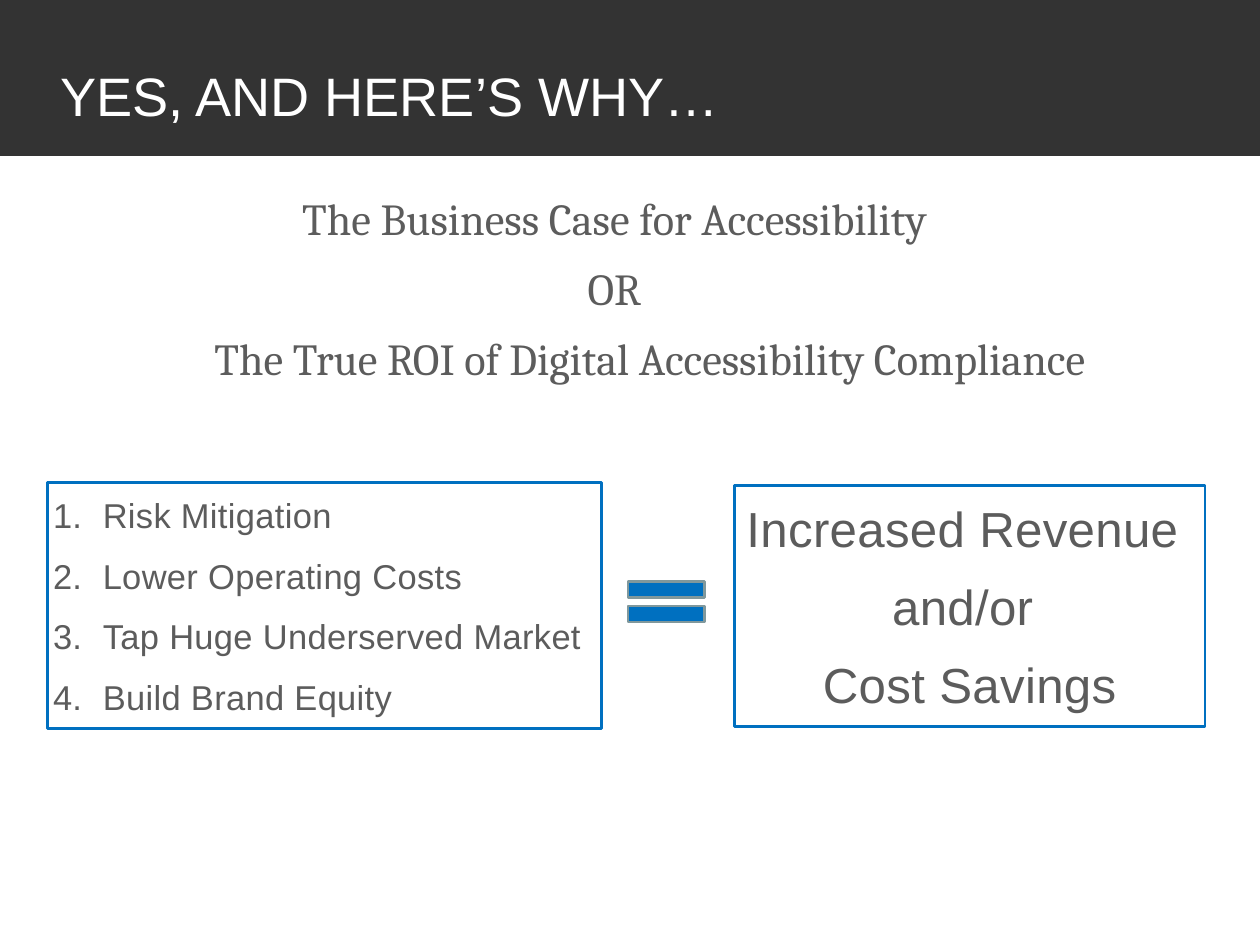
import pptx
import pptx.util
import pptx.dml.color
import pptx.enum.shapes
import pptx.enum.text
import pptx.oxml.ns
import lxml.etree
from dataclasses import dataclass

Inches = pptx.util.Inches
Pt = pptx.util.Pt
RGB = pptx.dml.color.RGBColor.from_string
MSO = pptx.enum.shapes.MSO_SHAPE
ALIGN = pptx.enum.text.PP_ALIGN
ANCHOR = pptx.enum.text.MSO_ANCHOR


@dataclass(frozen=True)
class Theme:
    band: str = "333333"
    white: str = "FFFFFF"
    text: str = "5C5C5C"
    blue: str = "0070C0"
    edge: str = "80989C"
    sans: str = "Arial"
    serif: str = "Cambria"
    title: int = 44
    heading: int = 36
    reasons: int = 28
    result: int = 40


theme = Theme()


def add_shape(kind, box, fill, line, width):
    sp = s.shapes.add_shape(kind, *[Inches(v) for v in box])
    sp.shadow.inherit = False
    if fill:
        sp.fill.solid()
        sp.fill.fore_color.rgb = RGB(fill)
    else:
        sp.fill.background()
    if line:
        sp.line.color.rgb = RGB(line)
        sp.line.width = Pt(width)
    else:
        sp.line.fill.background()
    return sp


def write(sp, lines, font, size, color, align, anchor, before, spc=0):
    tf = sp.text_frame
    tf.word_wrap = True
    tf.auto_size = pptx.enum.text.MSO_AUTO_SIZE.NONE
    tf.vertical_anchor = anchor
    tf.margin_left = tf.margin_right = tf.margin_top = tf.margin_bottom = Inches(0.06)
    for i, line in enumerate(lines):
        p = tf.add_paragraph() if i else tf.paragraphs[0]
        p.alignment = align
        p.space_before = Pt(before if i else 0)
        r = p.add_run()
        r.text = line
        r.font.name = font
        r.font.size = Pt(size)
        r.font.color.rgb = RGB(color)
        if spc:
            r.font._element.set("spc", str(spc))
    return tf


prs = pptx.Presentation()
prs.slide_width = Inches(14.22)
prs.slide_height = Inches(10.67)
s = prs.slides.add_slide(prs.slide_layouts[5])

band = add_shape(MSO.RECTANGLE, (0, 0, 14.22, 1.76), theme.band, None, 0)
s.shapes._spTree.insert(2, band._element)

title = s.shapes.title
title.left, title.top, title.width, title.height = [Inches(v) for v in (0.62, 0.58, 12.97, 0.79)]
tf = write(title, ["YES, AND HERE’S WHY…"], theme.sans, theme.title, theme.white,
           ALIGN.LEFT, ANCHOR.TOP, 0)
tf.margin_top = Inches(0.12)

heading = s.shapes.add_textbox(*[Inches(v) for v in (0.45, 2.17, 12.97, 2.73)])
tf = write(heading, ["The Business Case for Accessibility", "OR",
                     "The True ROI of Digital Accessibility Compliance"],
           theme.serif, theme.heading, theme.text, ALIGN.CENTER, ANCHOR.TOP, 18)
for p in tf.paragraphs:
    p.line_spacing = 0.9
tf.paragraphs[-1]._p.get_or_add_pPr().set("marL", str(Inches(0.8)))

reasons = add_shape(MSO.RECTANGLE, (0.54, 5.45, 6.25, 2.78), None, theme.blue, 2.25)
tf = write(reasons, ["Risk Mitigation", "Lower Operating Costs",
                     "Tap Huge Underserved Market", "Build Brand Equity"],
           theme.sans, theme.reasons, theme.text, ALIGN.LEFT, ANCHOR.MIDDLE, 15.5, 30)
for p in tf.paragraphs:
    pPr = p._p.get_or_add_pPr()
    pPr.set("marL", str(Inches(0.56)))
    pPr.set("indent", str(-Inches(0.56)))
    lxml.etree.SubElement(pPr, pptx.oxml.ns.qn("a:buAutoNum"), type="arabicPeriod")

add_shape(MSO.MATH_EQUAL, (6.93, 6.41, 1.18, 0.77), theme.blue, theme.edge, 2)

result = add_shape(MSO.RECTANGLE, (8.29, 5.48, 5.31, 2.72), None, theme.blue, 2.25)
write(result, ["Increased Revenue ", "and/or ", "Cost Savings"],
      theme.sans, theme.result, theme.text, ALIGN.CENTER, ANCHOR.MIDDLE, 15.5, 30)

prs.save("out.pptx")
